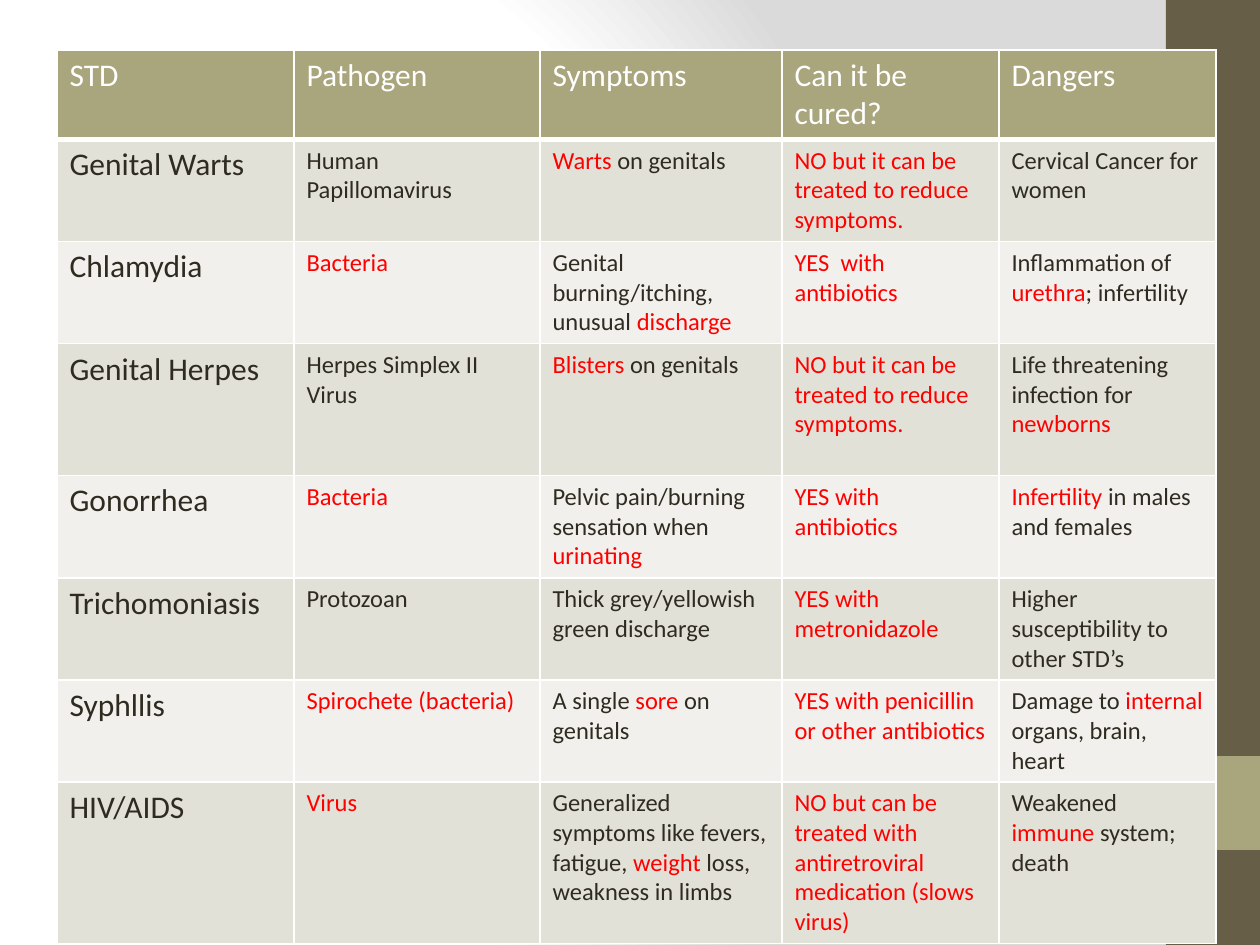
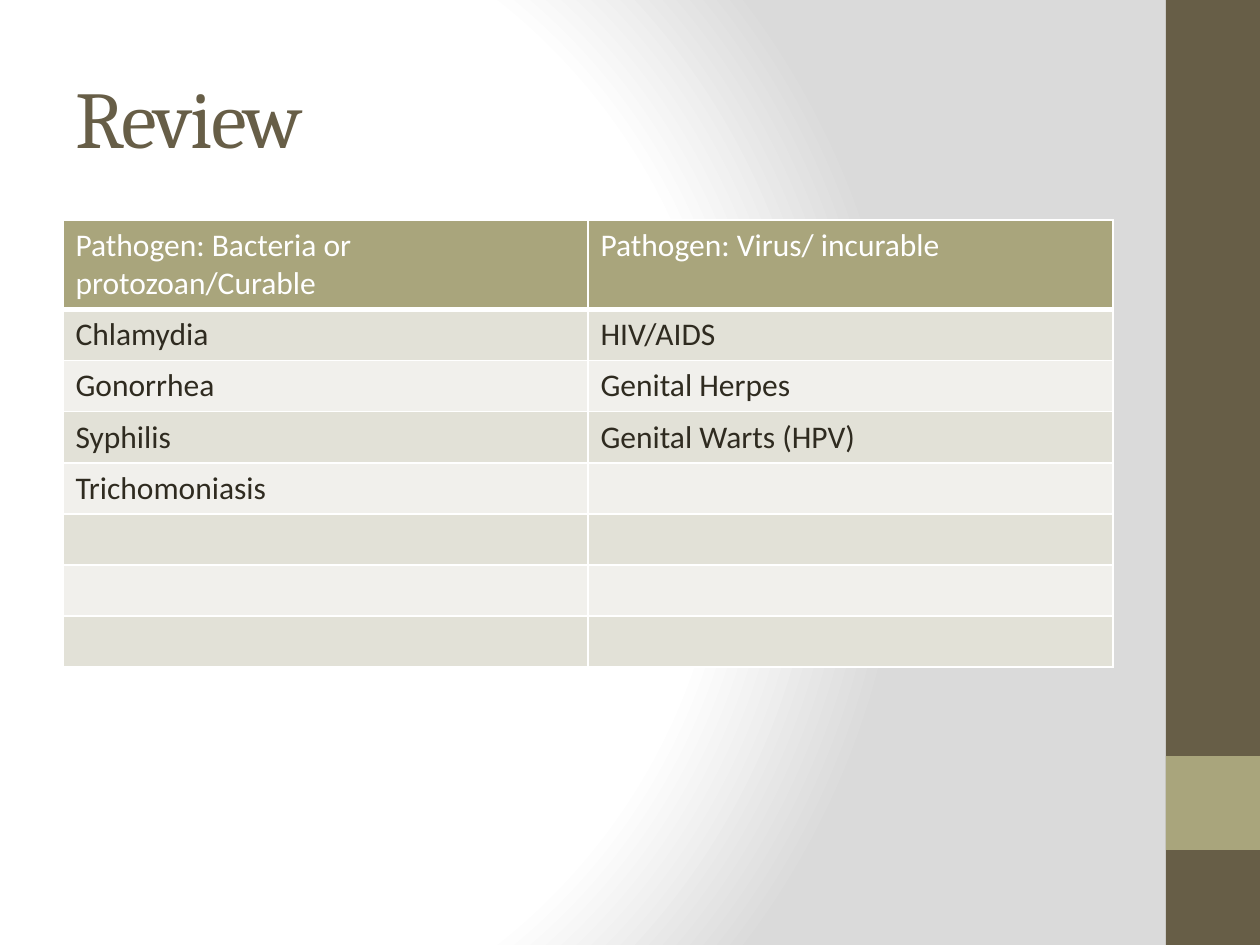
from lxml import etree
from pptx import Presentation
from pptx.dml.color import RGBColor
from pptx.enum.shapes import MSO_SHAPE
from pptx.enum.text import MSO_ANCHOR, PP_ALIGN
from pptx.oxml import parse_xml
from pptx.oxml.ns import qn
from pptx.util import Pt

RECT = MSO_SHAPE.RECTANGLE
MIDDLE = MSO_ANCHOR.MIDDLE
LEFT = PP_ALIGN.LEFT
SCALE = 914400 / 126
WIDE, HIGH = 1260, 945
TITLE_ONLY, BLANK = 5, 6
NS = "http://schemas.openxmlformats.org/drawingml/2006/main"

HEX = {
    "white": "FFFFFF",
    "grey": "DADADA",
    "brown": "675E47",
    "olive": "A9A57C",
    "ink": "2F2B20",
    "red": "FF0000",
    "dark": "E2E1D7",
    "light": "F1F0EC",
}
HEAD = {"name": "Calibri", "size": Pt(18), "bold": False}
BODY = {**HEAD, "size": Pt(14)}
TITLE = {"name": "Cambria", "size": Pt(46), "bold": False}

BANDS = [(0, HIGH, "brown"), (756, 94, "olive")]

STDS = [
    ["STD", "Pathogen", "Symptoms", "Can it be cured?", "Dangers"],
    ["Genital Warts", "Human Papillomavirus", "*Warts *on genitals",
     "*NO but it can be treated to reduce symptoms.", "Cervical Cancer for women"],
    ["Chlamydia", "*Bacteria", "Genital burning/itching, unusual *discharge",
     "*YES  with antibiotics", "Inflammation of *urethra*; infertility"],
    ["Genital Herpes", "Herpes Simplex II Virus", "*Blisters *on genitals",
     "*NO but it can be treated to reduce symptoms.",
     "Life threatening infection for *newborns"],
    ["Gonorrhea", "*Bacteria", "Pelvic pain/burning sensation when *urinating",
     "*YES with antibiotics", "*Infertility *in males and females"],
    ["Trichomoniasis", "Protozoan", "Thick grey/yellowish green discharge",
     "*YES with metronidazole", "Higher susceptibility to other STD’s"],
    ["Syphllis", "*Spirochete (bacteria)", "A single *sore *on genitals",
     "*YES with penicillin or other antibiotics",
     "Damage to *internal* organs, brain, heart"],
    ["HIV/AIDS", "*Virus",
     "Generalized symptoms like fevers, fatigue, *weight* loss, weakness in limbs",
     "*NO but can be treated with antiretroviral medication (slows virus)",
     "Weakened *immune *system; death"],
]
REVIEW = [
    ["Pathogen: Bacteria or protozoan/Curable", "Pathogen: Virus/ incurable"],
    ["Chlamydia", "HIV/AIDS"],
    ["Gonorrhea", "Genital Herpes"],
    ["Syphilis", "Genital Warts (HPV)"],
    ["Trichomoniasis", ""],
    *[["", ""]] * 3,
]


def px(*nums):
    return [round(n * SCALE) for n in nums]


def tint(name):
    return RGBColor.from_string(HEX[name])


def style(font, form, color):
    for key, val in form.items():
        setattr(font, key, val)
    font.color.rgb = tint(color)


def backdrop(prs):
    master = prs.slide_master
    master.background.fill.solid()
    old = master.element.find(f".//{qn('p:bgPr')}/{qn('a:solidFill')}")
    stops = "".join(
        f'<a:gs pos="{pos}000"><a:srgbClr val="{HEX[name]}"/></a:gs>'
        for pos, name in [(0, "white"), (75, "white"), (100, "grey")])
    grad = parse_xml(
        f'<a:gradFill xmlns:a="{NS}" rotWithShape="1"><a:gsLst>{stops}</a:gsLst>'
        '<a:path path="circle"><a:fillToRect l="20000" t="50000" r="100000" b="50000"/>'
        '</a:path></a:gradFill>')
    old.getparent().replace(old, grad)


def new_slide(prs, layout):
    slide = prs.slides.add_slide(prs.slide_layouts[layout])
    for top, high, color in BANDS:
        band = slide.shapes.add_shape(RECT, *px(1166, top, 94, high))
        band.shadow.inherit = False
        band.fill.solid()
        band.fill.fore_color.rgb = tint(color)
        band.line.fill.background()
    return slide


def add_title(slide, text):
    title = slide.shapes.title
    title.left, title.top, title.width, title.height = px(63, 38, 1050, 157)
    title.text_frame.vertical_anchor = MIDDLE
    para = title.text_frame.paragraphs[0]
    para.alignment = LEFT
    run = para.add_run()
    run.text = text
    style(run.font, TITLE, "brown")
    run.font._element.set("spc", "-100")


def add_lines(cell, first):
    props = cell._tc.get_or_add_tcPr()
    for side in "LRTB":
        width = Pt(3) if first and side == "B" else Pt(1)
        line = etree.SubElement(props, qn(f"a:ln{side}"), w=str(width))
        fill = etree.SubElement(line, qn("a:solidFill"))
        etree.SubElement(fill, qn("a:srgbClr"), val=HEX["white"])


def fill_cell(cell, text, form, row):
    add_lines(cell, row == 0)
    cell.fill.solid()
    shade = "olive" if row == 0 else ("light", "dark")[row % 2]
    cell.fill.fore_color.rgb = tint(shade)
    para = cell.text_frame.paragraphs[0]
    base = "white" if row == 0 else "ink"
    for num, part in enumerate(text.split("*")):
        if part:
            run = para.add_run()
            run.text = part
            style(run.font, form, "red" if num % 2 else base)


def add_grid(slide, data, left, top, cols, rows, body):
    box = px(left, top, sum(cols), sum(rows))
    grid = slide.shapes.add_table(len(rows), len(cols), *box).table
    for col, width in zip(grid.columns, px(*cols)):
        col.width = width
    for row, height in zip(grid.rows, px(*rows)):
        row.height = height
    for r, texts in enumerate(data):
        for c, text in enumerate(texts):
            form = body if r and c else HEAD
            fill_cell(grid.cell(r, c), text, form, r)


def main():
    prs = Presentation()
    prs.slide_width, prs.slide_height = px(WIDE, HIGH)
    backdrop(prs)

    slide = new_slide(prs, BLANK)
    add_grid(slide, STDS, 57, 50, [237, 246, 242, 217, 217],
             [89, 102, 102, 132, 102, 102, 102, 161], BODY)

    slide = new_slide(prs, TITLE_ONLY)
    add_title(slide, "Review")
    add_grid(slide, REVIEW, 63, 220, [525] * 2, [89] + [51] * 7, HEAD)

    prs.save("out.pptx")


if __name__ == "__main__":
    main()
